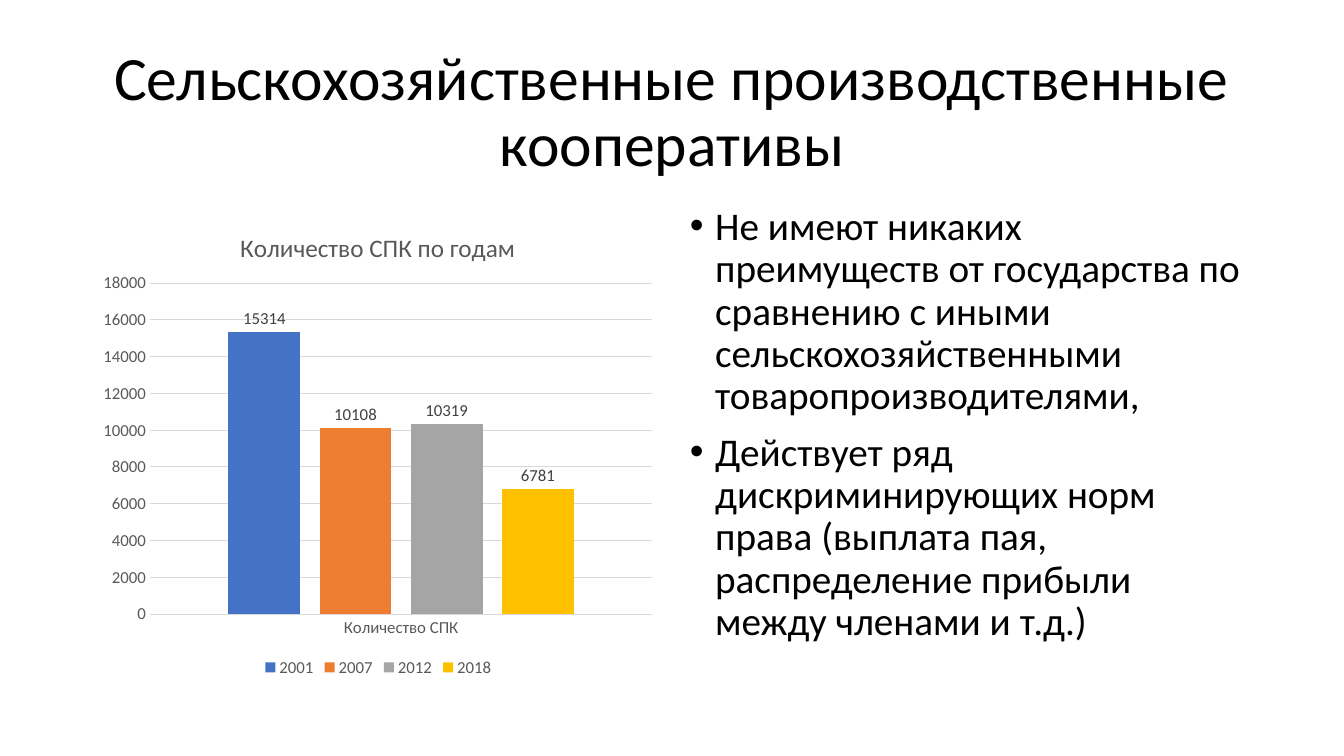
from dataclasses import dataclass

from lxml.etree import SubElement
from pptx import Presentation
from pptx.chart.data import CategoryChartData
from pptx.dml.color import RGBColor
from pptx.enum.chart import XL_CHART_TYPE as ChartType
from pptx.enum.chart import XL_LABEL_POSITION as LabelPos
from pptx.enum.chart import XL_LEGEND_POSITION as LegendPos
from pptx.enum.chart import XL_TICK_MARK as Tick
from pptx.enum.text import MSO_ANCHOR, MSO_AUTO_SIZE, PP_ALIGN
from pptx.oxml.ns import qn
from pptx.util import Inches, Pt

FONT = "Calibri"
COLORS = {
    "background": "FFFFFF", "text": "000000", "chart_text": "595959",
    "label": "404040", "grid": "D9D9D9",
    "2001": "4472C4", "2007": "ED7D31", "2012": "A5A5A5", "2018": "FFC000",
}

WIDTH, HEIGHT = Inches(13.33), Inches(7.5)
MARGIN, GUTTER = Inches(0.92), Inches(0.16)
CONTENT_W = WIDTH - 2 * MARGIN
COLUMN_W = (CONTENT_W - GUTTER) // 2
TITLE_TOP, TITLE_H = Inches(0.4), Inches(1.45)
BODY_TOP, BODY_H = Inches(2), Inches(4.76)

TITLE = "Сельскохозяйственные производственные кооперативы"
CHART_TITLE = "Количество СПК по годам"
CATEGORY = "Количество СПК"
BULLETS = (
    "Не имеют никаких преимуществ от государства по сравнению с иными "
    "сельскохозяйственными товаропроизводителями,",
    "Действует ряд дискриминирующих норм права (выплата пая, "
    "распределение прибыли между членами и т.д.)",
)


@dataclass(frozen=True)
class YearCount:
    year: str
    count: int


COUNTS = (
    YearCount("2001", 15314),
    YearCount("2007", 10108),
    YearCount("2012", 10319),
    YearCount("2018", 6781),
)


def rgb(name: str) -> RGBColor:
    return RGBColor.from_string(COLORS[name])


def style_font(font, size: float, color: str) -> None:
    font.name, font.size, font.bold = FONT, Pt(size), False
    font.color.rgb = rgb(color)


def add_run(p, text: str, size: float, color: str) -> None:
    r = p.add_run()
    r.text = text
    style_font(r.font, size, color)


def set_line(line, color: str) -> None:
    line.color.rgb = rgb(color)
    line.width = Pt(0.75)


def set_layout(parent, index: int, **shares: float) -> None:
    """Place a chart part by shares of the chart's size."""
    for old in parent.findall(qn("c:layout")):
        parent.remove(old)
    layout = SubElement(parent, qn("c:layout"))
    parent.insert(index, layout)
    manual = SubElement(layout, qn("c:manualLayout"))
    if "w" in shares:
        SubElement(manual, qn("c:layoutTarget")).set("val", "inner")
    for side in ("x", "y"):
        SubElement(manual, qn(f"c:{side}Mode")).set("val", "edge")
    for side, share in shares.items():
        SubElement(manual, qn(f"c:{side}")).set("val", str(share))


def add_title(slide) -> None:
    sp = slide.shapes.title
    sp.left, sp.top, sp.width, sp.height = MARGIN, TITLE_TOP, CONTENT_W, TITLE_H
    tf = sp.text_frame
    tf.word_wrap, tf.auto_size = True, MSO_AUTO_SIZE.NONE
    tf.vertical_anchor = MSO_ANCHOR.MIDDLE
    p = tf.paragraphs[0]
    p.alignment, p.line_spacing = PP_ALIGN.CENTER, 0.9
    add_run(p, TITLE, 44, "text")


def add_count_chart(slide) -> None:
    data = CategoryChartData()
    data.categories = [CATEGORY]
    for item in COUNTS:
        data.add_series(item.year, [item.count])
    chart = slide.shapes.add_chart(
        ChartType.COLUMN_CLUSTERED, MARGIN, BODY_TOP, COLUMN_W, BODY_H, data
    ).chart
    style_font(chart.font, 12, "chart_text")

    chart.has_title = True
    title = chart.chart_title
    add_run(title.text_frame.paragraphs[0], CHART_TITLE, 18, "chart_text")
    title.include_in_layout = False
    set_layout(title._element, 1, x=0.25, y=0.05)

    chart.has_legend = True
    chart.legend.position = LegendPos.BOTTOM
    chart.legend.include_in_layout = False
    style_font(chart.legend.font, 12, "chart_text")

    for axis in (chart.category_axis, chart.value_axis):
        axis.major_tick_mark = axis.minor_tick_mark = Tick.NONE
        style_font(axis.tick_labels.font, 12, "chart_text")
    set_line(chart.category_axis.format.line, "grid")
    values = chart.value_axis
    values.minimum_scale, values.maximum_scale, values.major_unit = 0, 18000, 2000
    values.format.line.fill.background()
    set_line(values.major_gridlines.format.line, "grid")

    plot = chart.plots[0]
    plot.gap_width, plot.overlap, plot.vary_by_categories = 219, -27, False
    for series in plot.series:
        series.format.fill.solid()
        series.format.fill.fore_color.rgb = rgb(series.name)
        labels = series.data_labels
        labels.show_value, labels.position = True, LabelPos.OUTSIDE_END
        style_font(labels.font, 12, "label")
    plot_area = chart._chartSpace.chart.plotArea
    set_layout(plot_area, 0, x=0.1, y=0.17, w=0.88, h=0.69)


def add_bullets(slide) -> None:
    left = MARGIN + COLUMN_W + GUTTER
    tf = slide.shapes.add_textbox(left, BODY_TOP, COLUMN_W, BODY_H).text_frame
    tf.word_wrap = True
    for i, text in enumerate(BULLETS):
        p = tf.add_paragraph() if i else tf.paragraphs[0]
        p.line_spacing, p.space_before = 0.9, Pt(10)
        add_run(p, text, 28, "text")
        props = p._p.get_or_add_pPr()
        props.set("marL", str(Inches(0.25)))
        props.set("indent", str(-Inches(0.25)))
        SubElement(props, qn("a:buFont")).set("typeface", "Arial")
        SubElement(props, qn("a:buChar")).set("char", "•")


def main() -> None:
    prs = Presentation()
    prs.slide_width, prs.slide_height = WIDTH, HEIGHT
    slide = prs.slides.add_slide(prs.slide_layouts[5])
    slide.background.fill.solid()
    slide.background.fill.fore_color.rgb = rgb("background")
    add_title(slide)
    add_count_chart(slide)
    add_bullets(slide)
    prs.save("out.pptx")


if __name__ == "__main__":
    main()
